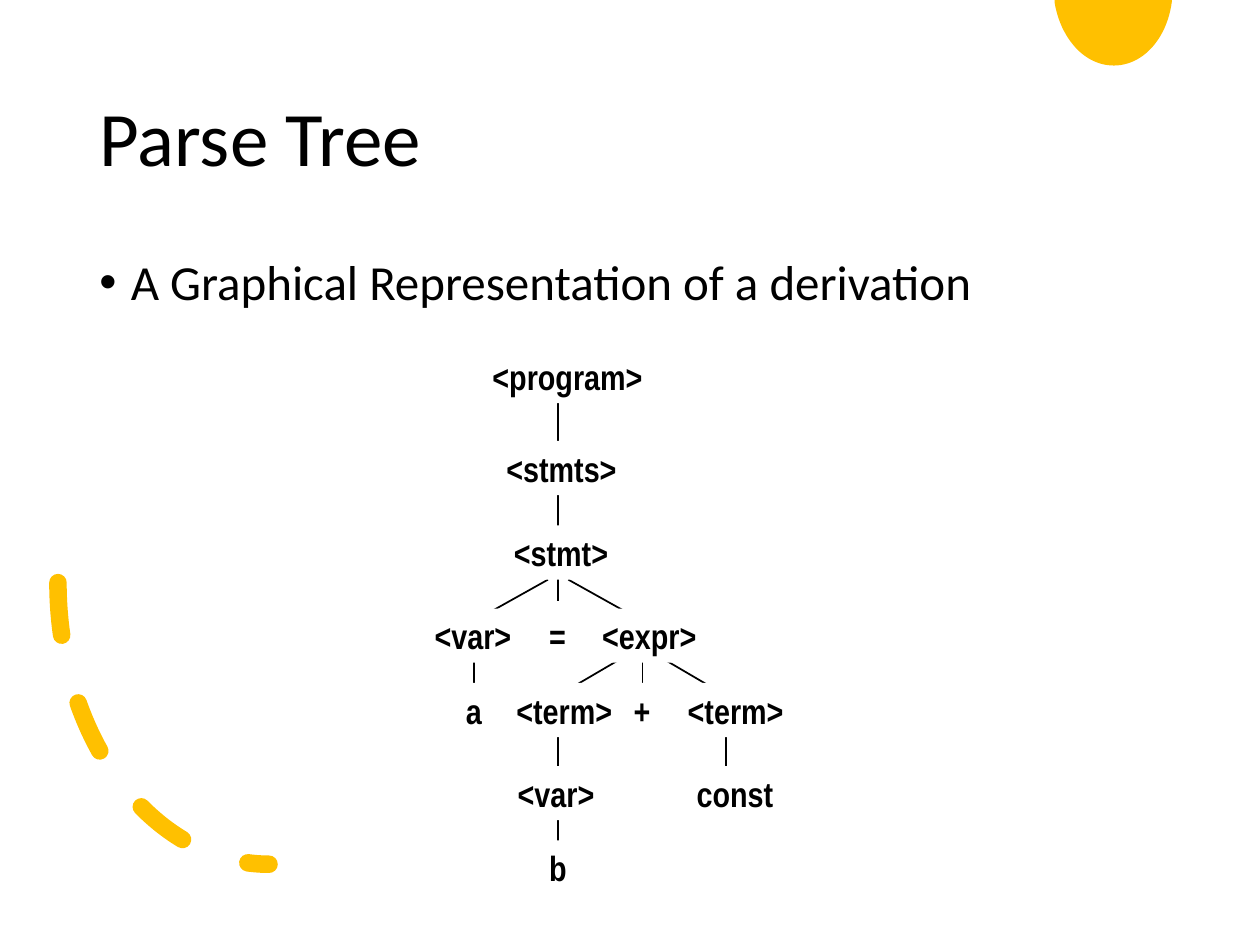
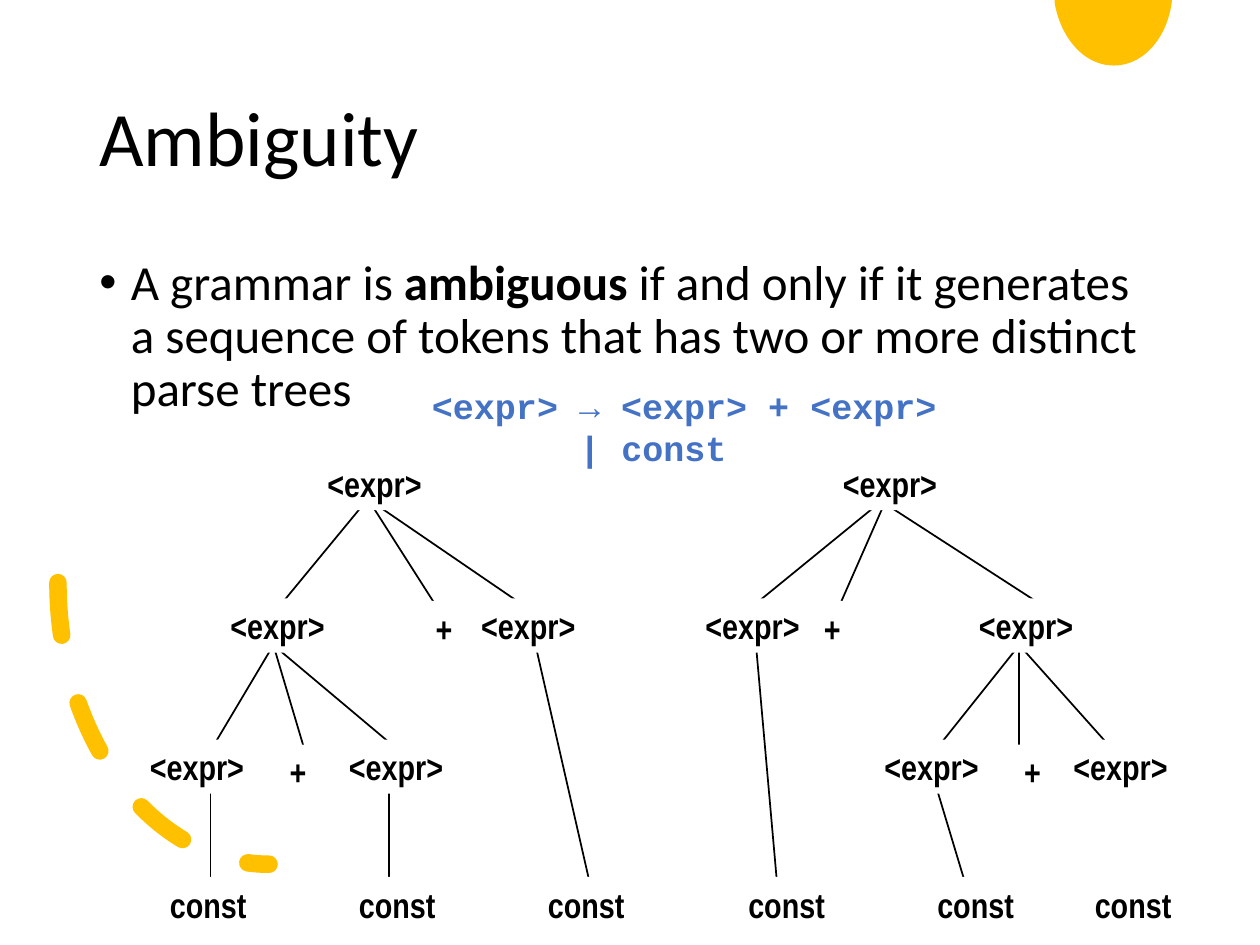
from dataclasses import dataclass

from lxml import etree
from pptx import Presentation
from pptx import util as u
from pptx.dml.color import RGBColor
from pptx.enum import dml, shapes, text
from pptx.oxml import ns


@dataclass(frozen=True)
class Theme:
    accent = RGBColor.from_string("FFC000")
    ink = RGBColor.from_string("000000")
    paper = RGBColor.from_string("FFFFFF")
    grammar = RGBColor.from_string("4472C4")
    title_font = {"name": "Calibri", "size": u.Pt(44)}
    body_font = {"name": "Calibri", "size": u.Pt(28)}
    node_font = {"name": "Arial Narrow", "size": u.Pt(20), "bold": True}
    grammar_font = {"name": "Courier New", "size": u.Pt(20), "bold": True}
    edge_width = u.Pt(1)
    arc_width = u.Pt(10)


THEME = Theme()
NODE_HEIGHT = 0.43
SIGN_WIDTH = 0.34
LABEL_WIDTHS = {"<program>": 1.39, "<stmts>": 1.08, "<stmt>": 0.95,
                "<expr>": 0.95, "<term>": 0.96, "<var>": 0.81, "const": 0.81}

# Trees: edges as (start, ends); nodes as (row top, label, left positions)
PARSE_EDGES = [
    ((4.43, 3.02), [(4.43, 4.77)]),
    ((4.35, 4.6), [(3.76, 4.93)]),
    ((4.51, 4.6), [(5.1, 4.93)]),
    ((3.76, 4.93), [(3.76, 5.43)]),
    ((5.01, 5.18), [(4.43, 5.52)]),
    ((5.1, 4.93), [(5.1, 5.52)]),
    ((5.18, 5.18), [(5.76, 5.52)]),
    ((4.43, 5.6), [(4.43, 6.93)]),
    ((5.76, 5.6), [(5.76, 6.35)]),
]
PARSE_NODES = [
    (2.77, "<program>", [3.81]),
    (3.5, "<stmts>", [3.92]),
    (4.17, "<stmt>", [3.98]),
    (4.83, "<var>", [3.35]),
    (4.83, "=", [4.26]),
    (4.83, "<expr>", [4.68]),
    (5.42, "a", [3.6]),
    (5.42, "<term>", [4, 5.36]),
    (5.42, "+", [4.93]),
    (6.08, "<var>", [4.01]),
    (6.08, "const", [5.43]),
    (6.67, "b", [4.26]),
]
AMBIGUOUS_EDGES = [
    # Left-leaning derivation
    ((2.92, 3.96), [(2.17, 4.87), (3.5, 4.87), (4.25, 4.87)]),
    ((2.17, 5.12), [(1.67, 5.96), (2.42, 5.96), (3.17, 5.96)]),
    ((1.67, 6.21), [(1.67, 7.04)]),
    ((3.09, 6.21), [(3.09, 7.04)]),
    ((4.25, 5.12), [(4.67, 6.96)]),
    # Right-leaning derivation
    ((6.92, 4.04), [(6, 4.79)]),
    ((7, 4.04), [(6.67, 4.79)]),
    ((7.09, 4.04), [(8.25, 4.79)]),
    ((8.09, 5.12), [(7.42, 5.96), (8.09, 5.96), (8.84, 5.96)]),
    ((6, 5.12), [(6.17, 7.04)]),
    ((7.42, 6.21), [(7.67, 7.04)]),
]
AMBIGUOUS_NODES = [
    (3.62, "<expr>", [2.5, 6.59]),
    (4.75, "<expr>", [1.73, 3.72, 5.5, 7.67]),
    (5.87, "<expr>", [1.09, 2.67, 6.92, 8.42]),
    (6.96, "const", [1.25, 2.75, 4.25, 5.84, 7.34, 8.59]),
    (4.77, "+", [3.36, 6.44]),
    (5.91, "+", [2.2, 8.03]),
]


def inches(*lengths):
    return [u.Inches(length) for length in lengths]


def add_run(paragraph, words, style, color=THEME.ink, **changes):
    run = paragraph.add_run()
    run.text = words
    for attribute, value in {**style, **changes}.items():
        setattr(run.font, attribute, value)
    run.font.color.rgb = color


def add_text_frame(slide, box):
    frame = slide.shapes.add_textbox(*inches(*box)).text_frame
    frame.word_wrap = True
    return frame


def cubic(start, control1, control2, end, steps=24):
    """Points after the start of a cubic curve."""
    for step in range(1, steps + 1):
        t = step / steps
        weights = ((1 - t) ** 3, 3 * t * (1 - t) ** 2, 3 * t * t * (1 - t), t ** 3)
        yield tuple(sum(w * p for w, p in zip(weights, axis))
                    for axis in zip(start, control1, control2, end))


def add_decorations(slide):
    # Sun cut off by the top edge
    right, bottom, left = (9.3, 0.02), (8.84, 0.52), (8.37, 0.02)
    rim = [(9.3, 0), right,
           *cubic(right, (9.26, 0.31), (9.07, 0.52), bottom),
           *cubic(bottom, (8.61, 0.52), (8.42, 0.31), left)]
    builder = slide.shapes.build_freeform(*inches(8.37, 0), scale=1)
    builder.add_line_segments([inches(*point) for point in rim], close=True)
    sun = builder.convert_to_shape()
    sun.shadow.inherit = False
    sun.fill.solid()
    sun.fill.fore_color.rgb = THEME.accent
    sun.line.fill.background()

    # Dashed arc with round ends at lower left
    arc = slide.shapes.add_shape(shapes.MSO_SHAPE.ARC, *inches(-0.1, 2.95, 4.47, 3.35))
    arc.shadow.inherit = False
    arc.rotation = 90
    arc.fill.background()
    arc.line.color.rgb = THEME.accent
    arc.line.width = THEME.arc_width
    arc.line.dash_style = dml.MSO_LINE.DASH
    properties = arc.element.spPr
    properties.find(ns.qn("a:xfrm")).set("flipV", "1")
    properties.find(ns.qn("a:ln")).set("cap", "rnd")


def add_title(slide, words):
    frame = add_text_frame(slide, (0.69, 0.4, 8.62, 1.45))
    frame.vertical_anchor = text.MSO_ANCHOR.MIDDLE
    heading = frame.paragraphs[0]
    heading.line_spacing = 0.9
    add_run(heading, words, THEME.title_font)


def set_indent(paragraph, margin, first_line=0):
    properties = paragraph._p.get_or_add_pPr()
    properties.set("marL", str(u.Inches(margin)))
    properties.set("indent", str(u.Inches(first_line)))
    return properties


def add_bullet(slide, parts):
    """Write one bullet from (words, bold) parts."""
    statement = add_text_frame(slide, (0.69, 2, 8.62, 4.76)).paragraphs[0]
    statement.line_spacing = 0.9
    statement.space_before = u.Pt(10)
    properties = set_indent(statement, 0.25, -0.25)
    etree.SubElement(properties, ns.qn("a:buFont")).set("typeface", "Arial")
    etree.SubElement(properties, ns.qn("a:buChar")).set("char", "•")
    for words, bold in parts:
        add_run(statement, words, THEME.body_font, bold=bold)


def add_edge(slide, start, end):
    edge = slide.shapes.add_connector(
        shapes.MSO_CONNECTOR.STRAIGHT, *inches(*start, *end))
    edge.line.color.rgb = THEME.ink
    edge.line.width = THEME.edge_width
    etree.SubElement(edge.element.spPr, ns.qn("a:effectLst"))


def add_node(slide, label, left, top):
    width = LABEL_WIDTHS.get(label, SIGN_WIDTH)
    node = slide.shapes.add_shape(
        shapes.MSO_SHAPE.RECTANGLE, *inches(left, top, width, NODE_HEIGHT))
    node.shadow.inherit = False
    node.fill.solid()
    node.fill.fore_color.rgb = THEME.paper
    node.line.fill.background()
    frame = node.text_frame
    layout = {"word_wrap": False, "vertical_anchor": text.MSO_ANCHOR.TOP,
              "auto_size": text.MSO_AUTO_SIZE.SHAPE_TO_FIT_TEXT}
    for attribute, value in layout.items():
        setattr(frame, attribute, value)
    frame.paragraphs[0].alignment = text.PP_ALIGN.LEFT
    add_run(frame.paragraphs[0], label, THEME.node_font)


def add_tree(slide, edges, nodes):
    for start, ends in edges:
        for end in ends:
            add_edge(slide, start, end)
    for top, label, lefts in nodes:
        for left in lefts:
            add_node(slide, label, left, top)


def add_grammar(slide):
    frame = add_text_frame(slide, (3.33, 3, 5.54, 0.77))
    rule, alternative = frame.paragraphs[0], frame.add_paragraph()
    add_run(rule, "<expr> → <expr> + <expr>", THEME.grammar_font, THEME.grammar)
    set_indent(alternative, 1.17)
    add_run(alternative, "| const", THEME.grammar_font, THEME.grammar)


def add_tree_slide(deck, title, statement, edges, nodes):
    slide = deck.slides.add_slide(deck.slide_layouts[6])
    add_decorations(slide)
    add_title(slide, title)
    add_bullet(slide, statement)
    add_tree(slide, edges, nodes)
    return slide


def main():
    deck = Presentation()
    deck.slide_width, deck.slide_height = inches(10, 7.5)

    add_tree_slide(deck, "Parse Tree",
                   [("A Graphical Representation of a derivation", False)],
                   PARSE_EDGES, PARSE_NODES)

    ambiguity = add_tree_slide(
        deck, "Ambiguity",
        [("A grammar is ", False), ("ambiguous", True),
         (" if and only if it generates a sequence of tokens that has "
          "two or more distinct parse trees", False)],
        AMBIGUOUS_EDGES, AMBIGUOUS_NODES)
    add_grammar(ambiguity)

    deck.save("out.pptx")


if __name__ == "__main__":
    main()
